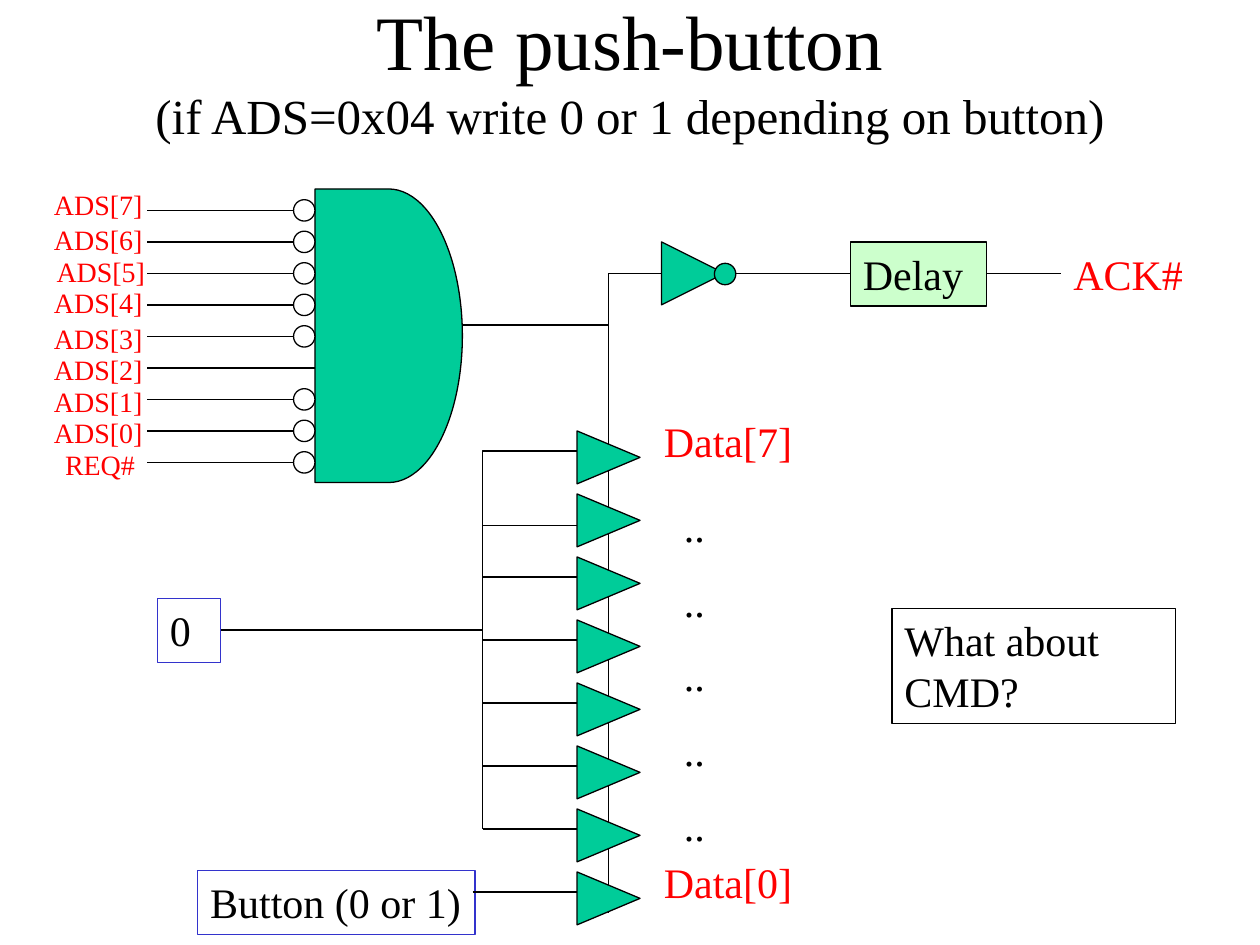
import pptx
import pptx.util
import pptx.dml.color
import pptx.enum.shapes
import pptx.enum.text
import lxml.etree
from pptx.util import Inches

COLORS = {"ink": "000000", "signal": "FF0000", "gate": "00CC99",
          "delay": "CCFFCC", "source": "3333CC", "bubble": "FFFFFF"}
FONT = "Times New Roman"
PRESET = pptx.enum.shapes.MSO_SHAPE
ALIGN = pptx.enum.text.PP_ALIGN
FRAME = {"margin_left": Inches(0.1), "margin_right": Inches(0.1),
         "margin_top": Inches(0.05), "margin_bottom": Inches(0.05),
         "vertical_anchor": pptx.enum.text.MSO_ANCHOR.TOP,
         "auto_size": pptx.enum.text.MSO_AUTO_SIZE.SHAPE_TO_FIT_TEXT}

deck = pptx.Presentation()
deck.slide_width, deck.slide_height = Inches(10), Inches(7.5)
slide = deck.slides.add_slide(deck.slide_layouts[5])
shapes = slide.shapes


def add_part(preset, place, fill=None, line="ink", rotation=0):
    part = shapes.add_shape(preset, *map(Inches, place))
    part.shadow.inherit = False
    part.rotation = rotation
    if fill:
        part.fill.solid()
        part.fill.fore_color.rgb = pptx.dml.color.RGBColor.from_string(COLORS[fill])
    else:
        part.fill.background()
    part.line.color.rgb = pptx.dml.color.RGBColor.from_string(COLORS[line])
    part.line.width = pptx.util.Pt(0.75)
    return part


def write(holder, text, size=24, color="ink", align=ALIGN.LEFT, wrap=True):
    frame = holder.text_frame
    frame.text = text
    frame.word_wrap = wrap
    for name, value in FRAME.items():
        setattr(frame, name, value)
    for number, paragraph in enumerate(frame.paragraphs):
        paragraph.alignment = align
        paragraph.space_before = pptx.util.Pt(14 if number else 0)
        style = {"size": pptx.util.Pt(size), "name": FONT}
        for name, value in style.items():
            setattr(paragraph.runs[0].font, name, value)
        paragraph.runs[0].font.color.rgb = pptx.dml.color.RGBColor.from_string(COLORS[color])


# Title with its smaller second line
title = shapes.title
title_place = {"left": Inches(0.75), "top": Inches(-0.08),
               "width": Inches(8.5), "height": Inches(1.25)}
for name, value in title_place.items():
    setattr(title, name, value)
title.text_frame.vertical_anchor = pptx.enum.text.MSO_ANCHOR.MIDDLE
heading = title.text_frame.paragraphs[0]
heading.alignment = ALIGN.CENTER
for text, size in [("The push-button", 44),
                   ("(if ADS=0x04 write 0 or 1 depending on button)", 28)]:
    if heading.runs:
        heading.add_line_break()
    run = heading.add_run()
    run.text = text
    run.font.size, run.font.name = pptx.util.Pt(size), FONT
    run.font.color.rgb = pptx.dml.color.RGBColor.from_string(COLORS["ink"])

# Bent wires: enable bus, zero source to the first buffer, bus to the inverter
bent_wires = [[(3.67, 2.58), (4.83, 2.58), (4.83, 7.25)],
              [(1.75, 5), (3.83, 5), (3.83, 3.58), (4.58, 3.58)],
              [(4.83, 2.58), (4.83, 2.17), (5.25, 2.17)]]
for points in bent_wires:
    corners = [(Inches(x), Inches(y)) for x, y in points]
    builder = shapes.build_freeform(*corners[0])
    builder.add_line_segments(corners[1:], close=False)
    bend = builder.convert_to_shape()
    bend.shadow.inherit = False
    bend.fill.background()
    bend.line.color.rgb = pptx.dml.color.RGBColor.from_string(COLORS["ink"])
    bend.line.width = pptx.util.Pt(0.75)

# Straight wires around the buffers and the inverter
wires = [(3.83, 5, 3.83, 6.58), (3.75, 7.08, 4.58, 7.08),
         (5.83, 2.17, 6.75, 2.17), (7.83, 2.17, 8.42, 2.17)]
wires += [(3.83, y, 4.58, y) for y in (4.17, 4.58, 5.08, 5.58, 6.08, 6.58)]

# Address decoder: AND gate with inverted inputs, except ADS[2]
add_part(PRESET.FLOWCHART_DELAY, (2.5, 1.5, 1.17, 2.33), "gate")
inputs = [("ADS[7]", 0.33, 1.44), ("ADS[6]", 0.33, 1.72), ("ADS[5]", 0.35, 1.97),
          ("ADS[4]", 0.33, 2.22), ("ADS[3]", 0.33, 2.5), ("ADS[2]", 0.33, 2.75),
          ("ADS[1]", 0.33, 3), ("ADS[0]", 0.33, 3.25), ("REQ#", 0.41, 3.5)]
for row, (signal, left, top) in enumerate(inputs):
    wire_y = 1.67 + 0.25 * row
    inverted = signal != "ADS[2]"
    wires.append((1.17, wire_y, 2.33 if inverted else 2.5, wire_y))
    if inverted:
        add_part(PRESET.OVAL, (2.33, wire_y - 0.085, 0.17, 0.17), "bubble")
    width = 0.91 if signal.startswith("ADS") else 0.76
    name_box = shapes.add_textbox(*map(Inches, (left, top, width, 0.37)))
    write(name_box, signal, 16, "signal",
          ALIGN.RIGHT if signal == "REQ#" else ALIGN.LEFT, wrap=False)

# Eight output buffers, then the inverter
for bit in range(8):
    add_part(PRESET.ISOSCELES_TRIANGLE, (4.62, 3.38 + 0.5 * bit, 0.42, 0.5), "gate", rotation=90)
add_part(PRESET.ISOSCELES_TRIANGLE, (5.25, 1.92, 0.5, 0.5), "gate", rotation=90)
add_part(PRESET.OVAL, (5.67, 2.09, 0.17, 0.17), "gate")

# Outlined boxes
boxes = [("Button (0 or 1)", (1.57, 6.91, 2.2, 0.51), None, "source", False),
         ("0", (1.25, 4.75, 0.5, 0.51), None, "source", True),
         ("Delay", (6.75, 1.92, 1.08, 0.51), "delay", "ink", True),
         ("What about CMD?", (7.08, 4.83, 2.25, 0.91), None, "ink", True)]
for text, place, fill, line, wrap in boxes:
    write(add_part(PRESET.RECTANGLE, place, fill, line), text, wrap=wrap)

# Output labels
outputs = [("Data[7]", (5.17, 3.25, 1.58, 0.5), "signal", True),
           ("Data[0]", (5.17, 6.75, 1.58, 0.5), "signal", True),
           ("\n".join([".."] * 5), (5.33, 3.92, 0.5, 2.9), "ink", True),
           ("ACK#", (8.42, 1.92, 1.07, 0.5), "signal", False)]
for text, place, color, wrap in outputs:
    write(shapes.add_textbox(*map(Inches, place)), text, color=color, wrap=wrap)

# Draw every straight wire
for ends in wires:
    wire = shapes.add_connector(pptx.enum.shapes.MSO_CONNECTOR.STRAIGHT, *map(Inches, ends))
    wire.line.color.rgb = pptx.dml.color.RGBColor.from_string(COLORS["ink"])
    wire.line.width = pptx.util.Pt(0.75)
    lxml.etree.SubElement(wire._element.spPr, pptx.oxml.ns.qn("a:effectLst"))

deck.save("out.pptx")
